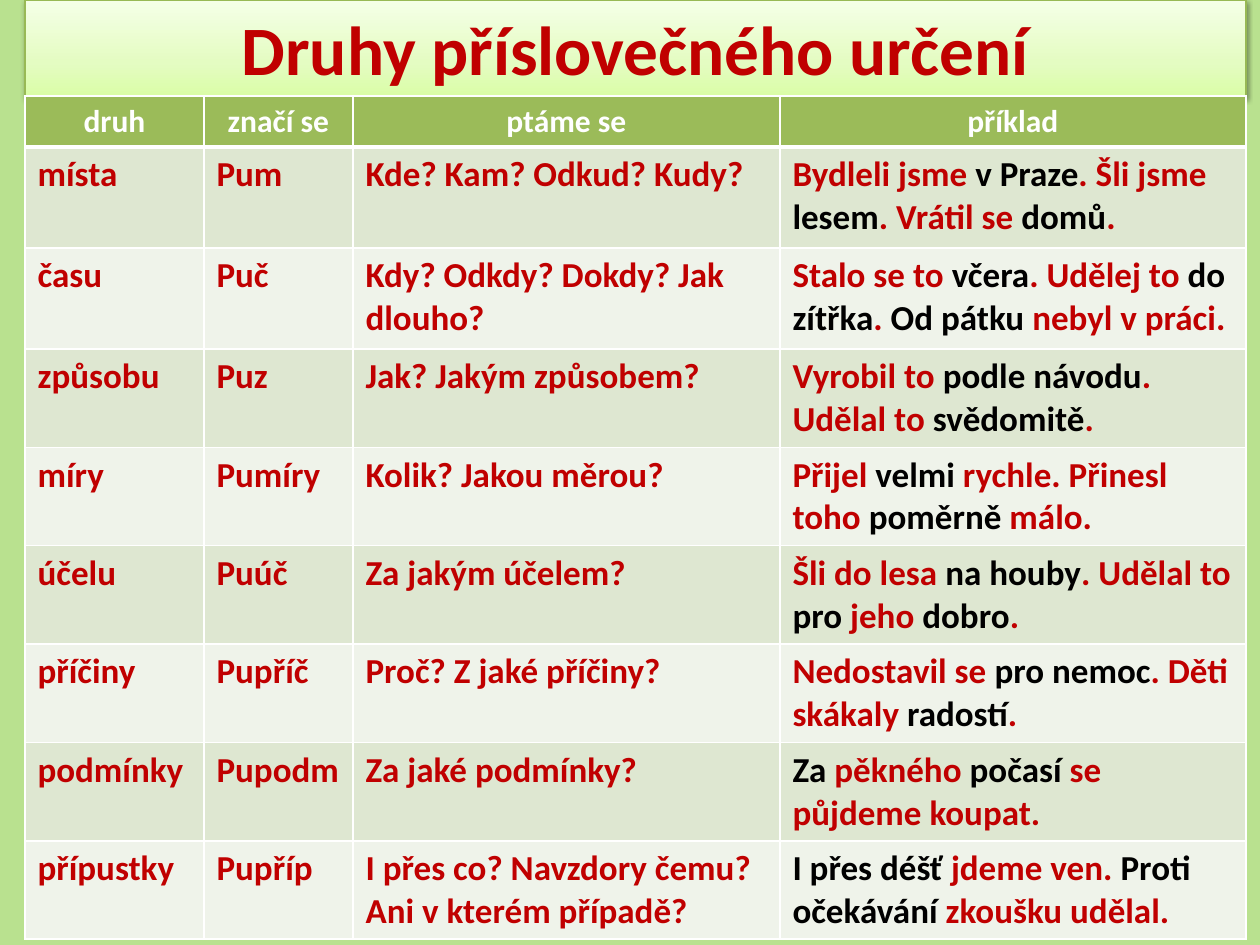
import lxml.etree
import pptx
import pptx.dml.color
import pptx.enum.text
import pptx.oxml
import pptx.oxml.ns
import pptx.util

PX = 914400 // 126
COLORS = {
    "page": "B9E18F", "title_line": "98B955", "red": "C00000",
    "black": "000000", "white": "FFFFFF", "header": "9BBB59",
    "odd_row": "DEE7D1", "even_row": "EFF3EA",
}
TITLE_STOPS = [(0, "DAFDA7"), (0.35, "E4FCC2"), (1, "F5FFE7")]
COLUMNS = [179, 149, 427, 466]
ROWS = [50] + [101] * 2 + [97] * 6
HEADINGS = ["druh", "značí se", "ptáme se", "příklad"]
# Asterisks enclose the adverbials, which are set in black.
KINDS = [
    ("místa", "Pum", "Kde? Kam? Odkud? Kudy?",
     "Bydleli jsme *v Praze*. Šli jsme *lesem*. Vrátil se *domů*."),
    ("času", "Puč", "Kdy? Odkdy? Dokdy? Jak dlouho?",
     "Stalo se to *včera*. Udělej to *do zítřka*. *Od pátku *nebyl v práci."),
    ("způsobu", "Puz", "Jak? Jakým způsobem?",
     "Vyrobil to *podle návodu*. Udělal to *svědomitě*."),
    ("míry", "Pumíry", "Kolik? Jakou měrou?",
     "Přijel *velmi* rychle. Přinesl toho *poměrně* málo."),
    ("účelu", "Puúč", "Za jakým účelem?",
     "Šli do lesa *na houby*. Udělal to *pro *jeho *dobro*."),
    ("příčiny", "Pupříč", "Proč? Z jaké příčiny?",
     "Nedostavil se *pro nemoc*. Děti skákaly *radostí*."),
    ("podmínky", "Pupodm", "Za jaké podmínky?",
     "*Za* pěkného *počasí* se půjdeme koupat."),
    ("přípustky", "Pupříp", "I přes co? Navzdory čemu?\nAni v kterém případě?",
     "*I přes déšť *jdeme ven. *Proti očekávání *zkoušku udělal."),
]


def px(length):
    return pptx.util.Emu(length * PX)


def rgb(name):
    return pptx.dml.color.RGBColor.from_string(COLORS.get(name, name))


def write(frame, text, size=20, color="red", accent="black", align=None):
    """Write one paragraph per line; text between asterisks takes the accent."""
    for number, line in enumerate(text.split("\n")):
        paragraph = frame.add_paragraph() if number else frame.paragraphs[0]
        paragraph.alignment = align
        for index, part in enumerate(line.split("*")):
            if part:
                run = paragraph.add_run()
                run.text = part
                run.font.name = "Calibri"
                run.font.size = pptx.util.Pt(size)
                run.font.bold = True
                run.font.color.rgb = rgb(accent if index % 2 else color)


def add_borders(cell, top=1, bottom=1):
    widths = {"lnL": 1, "lnR": 1, "lnT": top, "lnB": bottom}
    properties = cell._tc.get_or_add_tcPr()
    for side, width in widths.items():
        properties.append(pptx.oxml.parse_xml(
            f'<a:{side} {pptx.oxml.ns.nsdecls("a")} w="{pptx.util.Pt(width)}">'
            f'<a:solidFill><a:srgbClr val="{COLORS["white"]}"/></a:solidFill>'
            f'</a:{side}>'))


def build_title(slide, left, top, width, height):
    title = slide.shapes.title
    title.left, title.top = px(left), px(top)
    title.width, title.height = px(width), px(height)

    # Three-stop gradient, rising from the bottom edge
    title.fill.gradient()
    title.fill.gradient_angle = 90
    stop_list = title._element.spPr.find(".//" + pptx.oxml.ns.qn("a:gsLst"))
    lxml.etree.SubElement(stop_list, pptx.oxml.ns.qn("a:gs")).append(
        pptx.oxml.parse_xml(
            f'<a:srgbClr {pptx.oxml.ns.nsdecls("a")} val="FFFFFF"/>'))
    for stop, (position, color) in zip(title.fill.gradient_stops, TITLE_STOPS):
        stop.position = position
        stop.color.rgb = rgb(color)
    title.line.color.rgb = rgb("title_line")
    title.line.width = pptx.util.Pt(0.75)

    # Soft shadow below
    title.shadow.inherit = False
    effects = title._element.spPr.find(pptx.oxml.ns.qn("a:effectLst"))
    effects.append(pptx.oxml.parse_xml(
        f'<a:outerShdw {pptx.oxml.ns.nsdecls("a")} blurRad="40000" dist="20000" '
        f'dir="5400000" rotWithShape="0"><a:srgbClr val="{COLORS["black"]}">'
        '<a:alpha val="38000"/></a:srgbClr></a:outerShdw>'))

    title.text_frame.vertical_anchor = pptx.enum.text.MSO_ANCHOR.MIDDLE
    write(title.text_frame, "Druhy příslovečného určení", size=39.6,
          align=pptx.enum.text.PP_ALIGN.CENTER)


def build_table(slide, left, top, width, height):
    table = slide.shapes.add_table(len(ROWS), len(COLUMNS), px(left), px(top),
                                   px(width), px(height)).table
    for column, column_width in zip(table.columns, COLUMNS):
        column.width = px(column_width)
    for row, row_height in zip(table.rows, ROWS):
        row.height = px(row_height)

    for r, texts in enumerate([HEADINGS] + KINDS):
        for c, text in enumerate(texts):
            cell = table.cell(r, c)
            add_borders(cell, top=3 if r == 1 else 1, bottom=1 if r else 3)
            cell.fill.solid()
            if r == 0:
                cell.fill.fore_color.rgb = rgb("header")
                write(cell.text_frame, text, size=18, color="white",
                      align=pptx.enum.text.PP_ALIGN.CENTER)
            else:
                cell.fill.fore_color.rgb = rgb("odd_row" if r % 2 else "even_row")
                write(cell.text_frame, text)


def main():
    deck = pptx.Presentation()
    deck.slide_width, deck.slide_height = px(1260), px(945)
    slide = deck.slides.add_slide(deck.slide_layouts[5])
    slide.background.fill.solid()
    slide.background.fill.fore_color.rgb = rgb("page")
    build_title(slide, 25, 0, sum(COLUMNS), 96)
    build_table(slide, 25, 96, sum(COLUMNS), sum(ROWS))
    deck.save("out.pptx")


if __name__ == "__main__":
    main()
